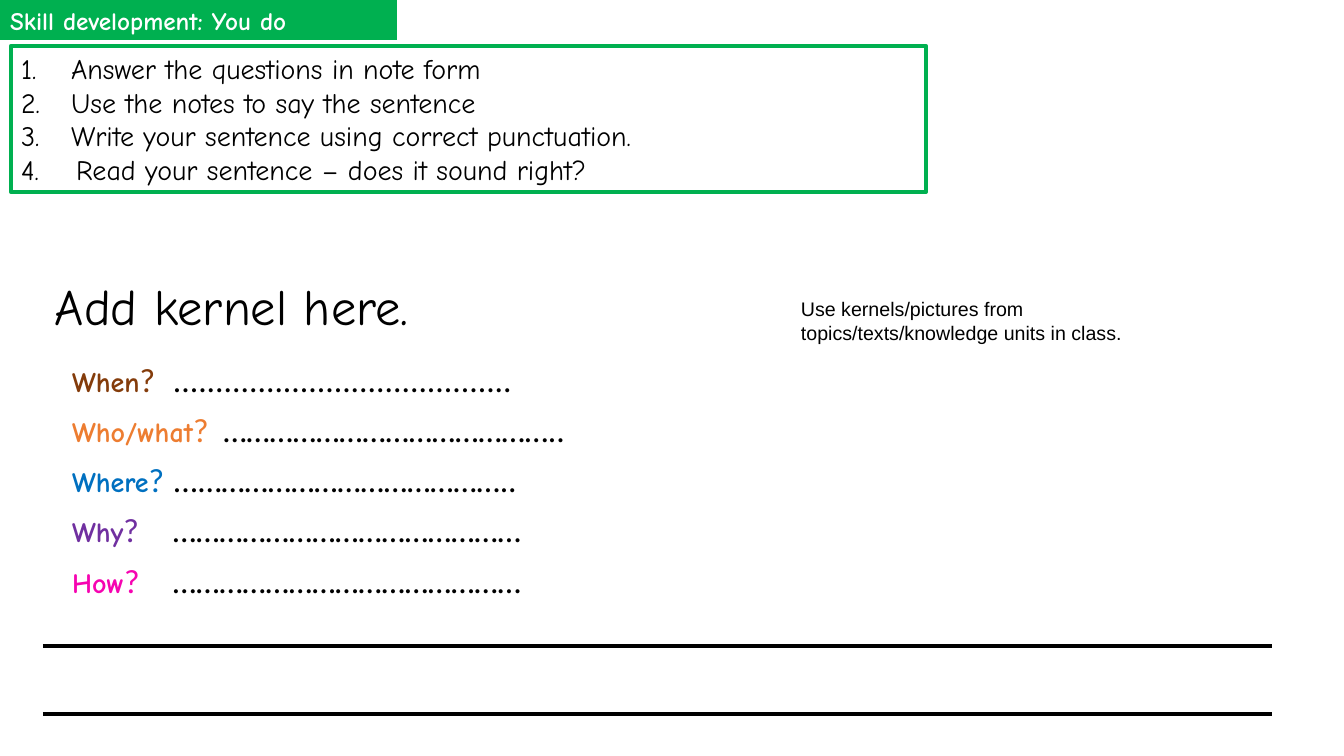
from dataclasses import dataclass

from lxml.etree import SubElement
from pptx import Presentation
from pptx.dml.color import RGBColor
from pptx.enum.shapes import MSO_CONNECTOR
from pptx.enum.text import MSO_ANCHOR, MSO_AUTO_SIZE, PP_ALIGN
from pptx.oxml.ns import qn
from pptx.util import Emu, Pt

EMU_PER_INCH = 914400
PX_PER_INCH = 100.8
TWO_CONTENT_LAYOUT = 3
HAND_FONT = "Comic Neue"
GREEN = "00B050"
BLACK = "000000"
WHITE = "FFFFFF"


@dataclass(frozen=True)
class Box:
    left: int
    top: int
    width: int
    height: int


@dataclass(frozen=True)
class Instruction:
    text: str
    indent: int = 50


@dataclass(frozen=True)
class Question:
    word: str
    color: str
    dots: str
    tab: int = 202


INSTRUCTIONS = [
    Instruction("Answer the questions in note form"),
    Instruction("Use the notes to say the sentence"),
    Instruction("Write your sentence using correct punctuation."),
    Instruction("Read your sentence – does it sound right?", indent=55),
]
QUESTIONS = [
    Question("When", "843C0B", "." * 40),
    Question("Who/what", "ED7D31", "…" * 38 + ".."),
    Question("Where", "0070C0", "..." + "…" * 37 + "..", tab=101),
    Question("Why", "7030A0", "…" * 39),
    Question("How", "F604B1", "…" * 39),
]
QUESTIONS = [
    Question("When", "843C0B", "........................................"),
    Question("Who/what", "ED7D31", "…………………………………….."),
    Question("Where", "0070C0", "...…………………………………..", tab=101),
    Question("Why", "7030A0", "………………………………………"),
    Question("How", "F604B1", "………………………………………"),
]
WRITING_LINE_TOPS = [646, 714]


def px(length: int) -> Emu:
    return Emu(round(length * EMU_PER_INCH / PX_PER_INCH))


def rgb(color: str) -> RGBColor:
    return RGBColor.from_string(color)


def place(shape, box: Box, anchor=MSO_ANCHOR.TOP) -> None:
    shape.left, shape.top = px(box.left), px(box.top)
    shape.width, shape.height = px(box.width), px(box.height)
    frame = shape.text_frame
    frame.word_wrap = True
    frame.auto_size = MSO_AUTO_SIZE.NONE
    frame.vertical_anchor = anchor


def fill_shape(shape, color: str) -> None:
    shape.fill.solid()
    shape.fill.fore_color.rgb = rgb(color)


def add_run(paragraph, text: str, *, size: int, font: str = HAND_FONT,
            color: str = BLACK, bold: bool = False) -> None:
    run = paragraph.add_run()
    run.text = text
    run.font.size = Pt(size)
    run.font.name = font
    run.font.bold = bold
    run.font.color.rgb = rgb(color)


def next_paragraph(frame, index: int, *, spacing: float = 1.0, before: int = 0):
    paragraph = frame.paragraphs[0] if index == 0 else frame.add_paragraph()
    paragraph.alignment = PP_ALIGN.LEFT
    paragraph.line_spacing = spacing
    paragraph.space_before = Pt(before if index else 0)
    return paragraph


def set_indent(paragraph, margin: int, indent: int):
    properties = paragraph._p.get_or_add_pPr()
    properties.set("marL", str(px(margin)))
    properties.set("indent", str(px(indent)))
    return properties


def number_paragraph(paragraph, indent: int) -> None:
    properties = set_indent(paragraph, indent, -indent)
    bullet_color = SubElement(properties, qn("a:buClr"))
    SubElement(bullet_color, qn("a:srgbClr"), val=BLACK)
    SubElement(properties, qn("a:buFontTx"))
    SubElement(properties, qn("a:buAutoNum"), type="arabicPeriod")


def set_tab(paragraph, position: int) -> None:
    properties = set_indent(paragraph, 0, 0)
    SubElement(properties, qn("a:buNone"))
    tabs = SubElement(properties, qn("a:tabLst"))
    SubElement(tabs, qn("a:tab"), pos=str(px(position)), algn="l")


def write_title(title) -> None:
    place(title, Box(0, 0, 397, 40), MSO_ANCHOR.MIDDLE)
    fill_shape(title, GREEN)
    paragraph = next_paragraph(title.text_frame, 0)
    add_run(paragraph, "Skill development: You do", size=18, color=WHITE, bold=True)


def write_instructions(body) -> None:
    place(body, Box(11, 46, 915, 146), MSO_ANCHOR.MIDDLE)
    fill_shape(body, WHITE)
    body.line.color.rgb = rgb(GREEN)
    body.line.width = Pt(3)
    for index, instruction in enumerate(INSTRUCTIONS):
        paragraph = next_paragraph(body.text_frame, index)
        number_paragraph(paragraph, instruction.indent)
        add_run(paragraph, instruction.text, size=20)


def write_questions(body) -> None:
    place(body, Box(62, 358, 729, 253))
    for index, question in enumerate(QUESTIONS):
        paragraph = next_paragraph(body.text_frame, index, spacing=0.9, before=10)
        set_tab(paragraph, question.tab)
        add_run(paragraph, question.word, size=20, color=question.color, bold=True)
        add_run(paragraph, "?", size=24, font="Calibri", color=question.color)
        add_run(paragraph, "\t" + question.dots, size=24, font="Calibri")


def add_text(slide, box: Box, text: str, **text_format) -> None:
    shape = slide.shapes.add_textbox(0, 0, 0, 0)
    place(shape, box)
    add_run(next_paragraph(shape.text_frame, 0), text, **text_format)


def add_writing_line(slide, top: int) -> None:
    line = slide.shapes.add_connector(
        MSO_CONNECTOR.STRAIGHT, px(43), px(top), px(1272), px(top))
    line.line.color.rgb = rgb(BLACK)
    line.line.width = Pt(2.25)
    SubElement(line._element.spPr, qn("a:effectLst"))


def main() -> None:
    presentation = Presentation()
    presentation.slide_width, presentation.slide_height = px(1344), px(756)
    slide = presentation.slides.add_slide(
        presentation.slide_layouts[TWO_CONTENT_LAYOUT])
    write_title(slide.shapes.title)
    write_instructions(slide.placeholders[1])
    for top in WRITING_LINE_TOPS:
        add_writing_line(slide, top)
    add_text(slide, Box(45, 270, 625, 72), "Add kernel here.", size=36)
    add_text(slide, Box(791, 292, 401, 57),
             "Use kernels/pictures from topics/texts/knowledge units in class.",
             size=14, font="Arial")
    write_questions(slide.placeholders[2])
    presentation.save("out.pptx")


if __name__ == "__main__":
    main()
